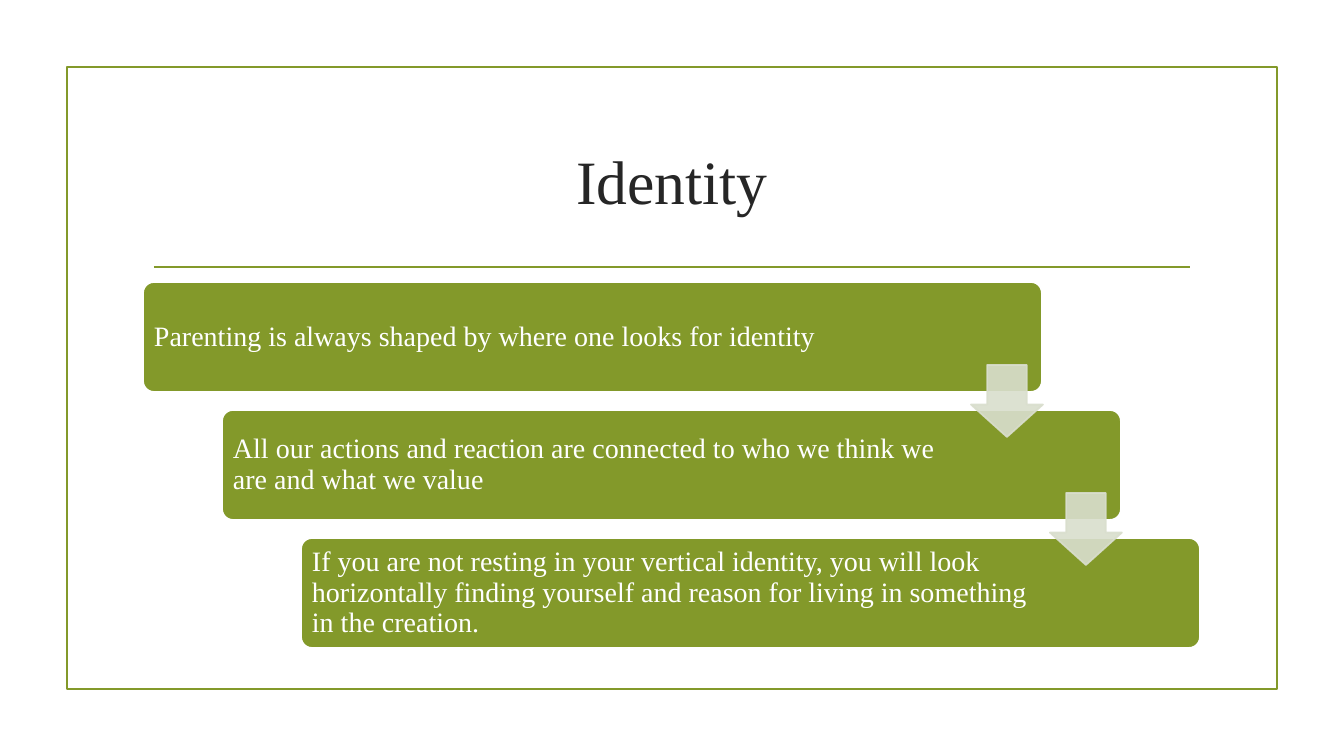
from lxml import etree
from pptx import Presentation
from pptx.dml.color import RGBColor
from pptx.enum.shapes import MSO_CONNECTOR, MSO_SHAPE
from pptx.enum.text import MSO_ANCHOR, PP_ALIGN
from pptx.oxml.ns import qn
from pptx.util import Inches, Pt

RECTANGLE, ROUNDED = MSO_SHAPE.RECTANGLE, MSO_SHAPE.ROUNDED_RECTANGLE
DOWN_ARROW, STRAIGHT = MSO_SHAPE.DOWN_ARROW, MSO_CONNECTOR.STRAIGHT
MIDDLE, LEFT, CENTER = MSO_ANCHOR.MIDDLE, PP_ALIGN.LEFT, PP_ALIGN.CENTER

OLIVE = RGBColor(0x83, 0x99, 0x2A)
PALE = RGBColor(0xD9, 0xDE, 0xCD)
WHITE = RGBColor(0xFF, 0xFF, 0xFF)
DARK = RGBColor(0x26, 0x26, 0x26)

EMU_PER_PX = Inches(7.5) / 756
STEP_X, STEP_Y = 79, 128
STEPS = [
    ("Parenting is always shaped by where one looks for identity", 781),
    ("All our actions and reaction are connected to who we think we "
     "are and what we value", 743),
    ("If you are not resting in your vertical identity, you will look "
     "horizontally finding yourself and reason for living in something "
     "in the creation.", 743),
]


def px(*lengths):
    return [round(length * EMU_PER_PX) for length in lengths]


def assign(target, values):
    for name, value in values.items():
        setattr(target, name, value)


class SlideBuilder:
    font_name = "Times New Roman"
    line_width = Pt(1.25)

    def __init__(self, page):
        self.page = page

    def shape(self, kind, bounds, line, fill=None, adjustments=(), alpha=None):
        shape = self.page.shapes.add_shape(kind, *px(*bounds))
        shape.shadow.inherit = False
        for index, value in enumerate(adjustments):
            shape.adjustments[index] = value
        if fill is None:
            shape.fill.background()
        else:
            shape.fill.solid()
            shape.fill.fore_color.rgb = fill
        shape.line.color.rgb = line
        shape.line.width = self.line_width
        if alpha is not None:
            for color in shape._element.spPr.iter(qn("a:srgbClr")):
                etree.SubElement(color, qn("a:alpha"), val=str(alpha * 1000))

    def rule(self, start, end, color):
        rule = self.page.shapes.add_connector(STRAIGHT, *px(*start, *end))
        rule.line.color.rgb = color
        rule.line.width = self.line_width
        etree.SubElement(rule._element.spPr, qn("a:effectLst"))

    def text(self, words, bounds, size, color, align=LEFT, spacing=1.0):
        box = self.page.shapes.add_textbox(*px(*bounds))
        inset = px(8)[0]
        assign(box.text_frame, {
            "word_wrap": True, "vertical_anchor": MIDDLE,
            "margin_left": inset, "margin_right": inset,
            "margin_top": inset, "margin_bottom": inset})
        para = box.text_frame.paragraphs[0]
        assign(para, {"alignment": align, "line_spacing": spacing})
        span = para.add_run()
        span.text = words
        assign(span.font, {"name": self.font_name, "size": Pt(size)})
        span.font.color.rgb = color


def main():
    deck = Presentation()
    deck.slide_width, deck.slide_height = px(1344, 756)
    builder = SlideBuilder(deck.slides.add_slide(deck.slide_layouts[6]))

    # Frame, title and rule
    builder.shape(RECTANGLE, (67, 67, 1210, 622), OLIVE)
    builder.rule((154, 267), (1190, 267), OLIVE)
    builder.text("Identity", (143, 108, 1058, 144), 44, DARK, CENTER)

    # Staircase of statements
    for index, (words, text_width) in enumerate(STEPS):
        left, top = 143 + index * STEP_X, 282 + index * STEP_Y
        builder.shape(ROUNDED, (left, top, 899, 110), WHITE, OLIVE, [0.1])
        builder.text(words, (left + 3, top + 3, text_width, 104), 20, WHITE,
                     spacing=0.9)

    # Arrows from each statement to the next
    for index in range(len(STEPS) - 1):
        bounds = (971 + index * STEP_X, 365 + index * STEP_Y, 72, 72)
        builder.shape(DOWN_ARROW, bounds, PALE, PALE, [0.55, 0.45], alpha=90)

    deck.save("out.pptx")


if __name__ == "__main__":
    main()
